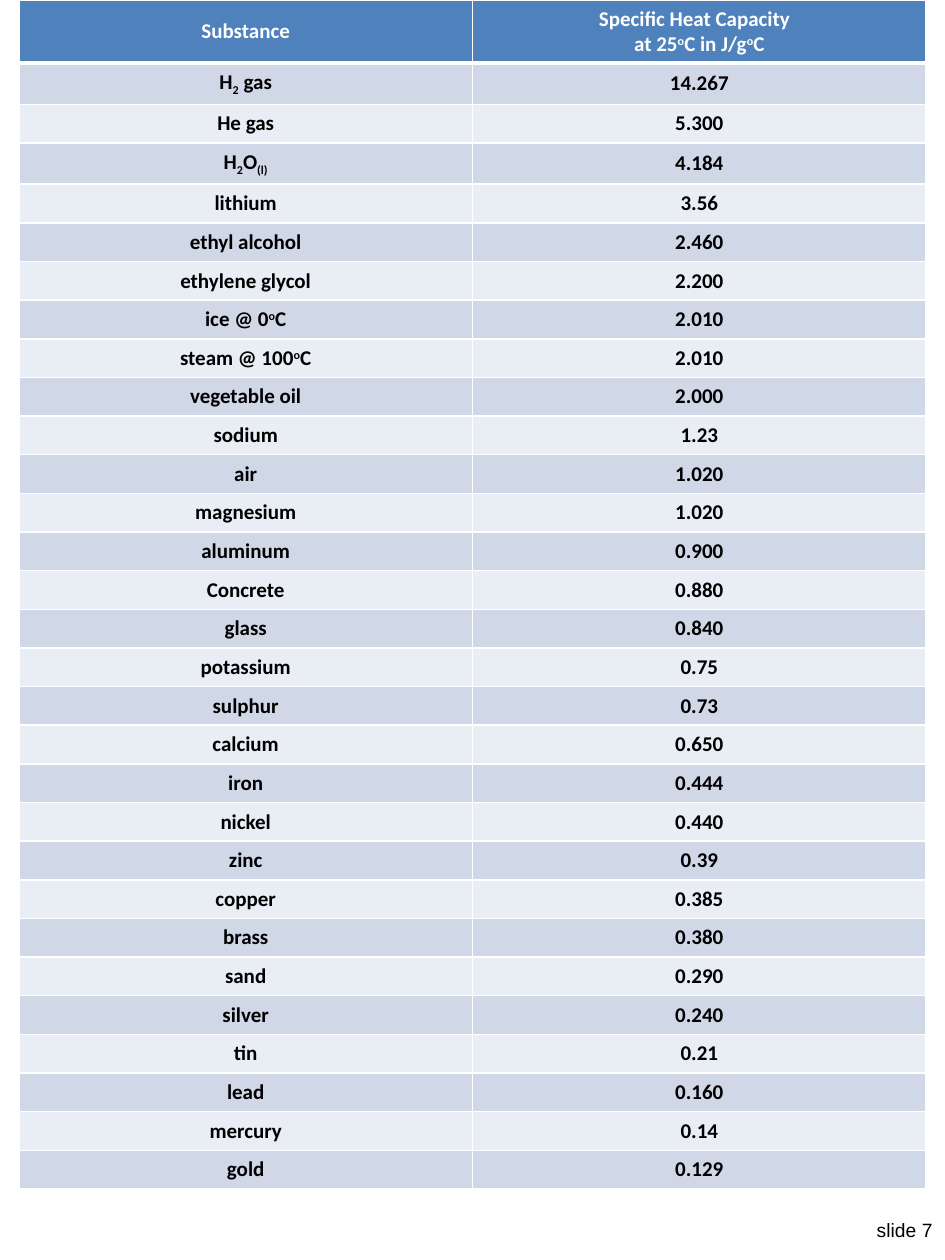
from lxml.etree import SubElement
from pptx import Presentation
from pptx.dml.color import RGBColor
from pptx.enum.text import MSO_ANCHOR, MSO_AUTO_SIZE, PP_ALIGN
from pptx.oxml.ns import qn
from pptx.util import Inches, Pt

HEADER_BLUE = RGBColor(0x4F, 0x81, 0xBD)
BAND_DARK = RGBColor(0xD0, 0xD8, 0xE8)
BAND_LIGHT = RGBColor(0xE9, 0xED, 0xF4)
WHITE = RGBColor(0xFF, 0xFF, 0xFF)
BLACK = RGBColor(0x00, 0x00, 0x00)

TABLE_HEIGHT = 9.38
HEADER_HEIGHT = 0.48

# "|" separates runs; a leading "_" lowers a run and "^" raises it
BASELINES = {"_": "-25000", "^": "30000"}
HEADINGS = ("Substance", "Specific Heat Capacity  |\n|at 25|^o|C in J/g|^o|C")
HEAT_CAPACITIES = [
    ("H|_2| gas", "14.267"),
    ("He gas", "5.300"),
    ("H|_2|O|_(l)", "4.184"),
    ("lithium", "3.56"),
    ("ethyl alcohol", "2.460"),
    ("ethylene glycol", "2.200"),
    ("ice @ 0|^o|C", "2.010"),
    ("steam @ 100|^o|C", "2.010"),
    ("vegetable oil", "2.000"),
    ("sodium", "1.23"),
    ("air", "1.020"),
    ("magnesium", "1.020"),
    ("aluminum", "0.900"),
    ("Concrete", "0.880"),
    ("glass", "0.840"),
    ("potassium", "0.75"),
    ("sulphur", "0.73"),
    ("calcium", "0.650"),
    ("iron", "0.444"),
    ("nickel", "0.440"),
    ("zinc", "0.39"),
    ("copper", "0.385"),
    ("brass", "0.380"),
    ("sand", "0.290"),
    ("silver", "0.240"),
    ("tin", "0.21"),
    ("lead", "0.160"),
    ("mercury", "0.14"),
    ("gold", "0.129"),
]


def style_paragraph(paragraph, font_name, size, color, align, bold=False):
    paragraph.alignment = align
    font = paragraph.font
    font.name, font.size, font.bold = font_name, Pt(size), bold
    font.color.rgb = color


def write_formula(paragraph, text):
    """Add the runs of a text with lowered and raised parts."""
    for part in text.split("|"):
        if part == "\n":
            paragraph.add_line_break()
            continue
        run = paragraph.add_run()
        run.text = part.lstrip("_^")
        if part[0] in BASELINES:
            run._r.get_or_add_rPr().set("baseline", BASELINES[part[0]])


def set_borders(cell, color, widths):
    """Draw the borders; widths maps each side (L, R, T, B) to points."""
    properties = cell._tc.get_or_add_tcPr()
    for position, (side, width) in enumerate(widths.items()):
        line = SubElement(properties, qn(f"a:ln{side}"), w=str(Pt(width)))
        fill = SubElement(line, qn("a:solidFill"))
        SubElement(fill, qn("a:srgbClr"), val=str(color))
        properties.insert(position, line)  # borders come before the fill


def fill_row(table, row_index, texts, fill_color, text_color, top=1, bottom=1):
    for column, text in enumerate(texts):
        cell = table.cell(row_index, column)
        cell.vertical_anchor = MSO_ANCHOR.MIDDLE
        cell.fill.solid()
        cell.fill.fore_color.rgb = fill_color
        set_borders(cell, WHITE, {"L": 1, "R": 1, "T": top, "B": bottom})
        paragraph = cell.text_frame.paragraphs[0]
        style_paragraph(paragraph, "Calibri", 12, text_color, PP_ALIGN.CENTER, bold=True)
        write_formula(paragraph, text)


def add_heat_capacity_table(slide):
    table = slide.shapes.add_table(
        len(HEAT_CAPACITIES) + 1, len(HEADINGS),
        Inches(0.15), Inches(0), Inches(7.2), Inches(TABLE_HEIGHT),
    ).table

    # Header row
    table.rows[0].height = Inches(HEADER_HEIGHT)
    fill_row(table, 0, HEADINGS, HEADER_BLUE, WHITE, bottom=3)

    # Banded substance rows
    row_height = Inches((TABLE_HEIGHT - HEADER_HEIGHT) / len(HEAT_CAPACITIES))
    for index, entry in enumerate(HEAT_CAPACITIES, start=1):
        table.rows[index].height = row_height
        band = BAND_DARK if index % 2 else BAND_LIGHT
        fill_row(table, index, entry, band, BLACK, top=3 if index == 1 else 1)


def add_slide_number(slide):
    number_box = slide.shapes.add_textbox(
        Inches(6.75), Inches(9.62), Inches(0.75), Inches(0.29))
    frame = number_box.text_frame
    frame.word_wrap = False
    frame.auto_size = MSO_AUTO_SIZE.SHAPE_TO_FIT_TEXT
    paragraph = frame.paragraphs[0]
    paragraph.text = "slide 7"
    style_paragraph(paragraph, "Arial", 11, BLACK, PP_ALIGN.RIGHT)


def main():
    presentation = Presentation()
    presentation.slide_width = Inches(7.5)
    presentation.slide_height = Inches(10)
    slide = presentation.slides.add_slide(presentation.slide_layouts[6])
    add_slide_number(slide)
    add_heat_capacity_table(slide)
    presentation.save("out.pptx")


if __name__ == "__main__":
    main()
